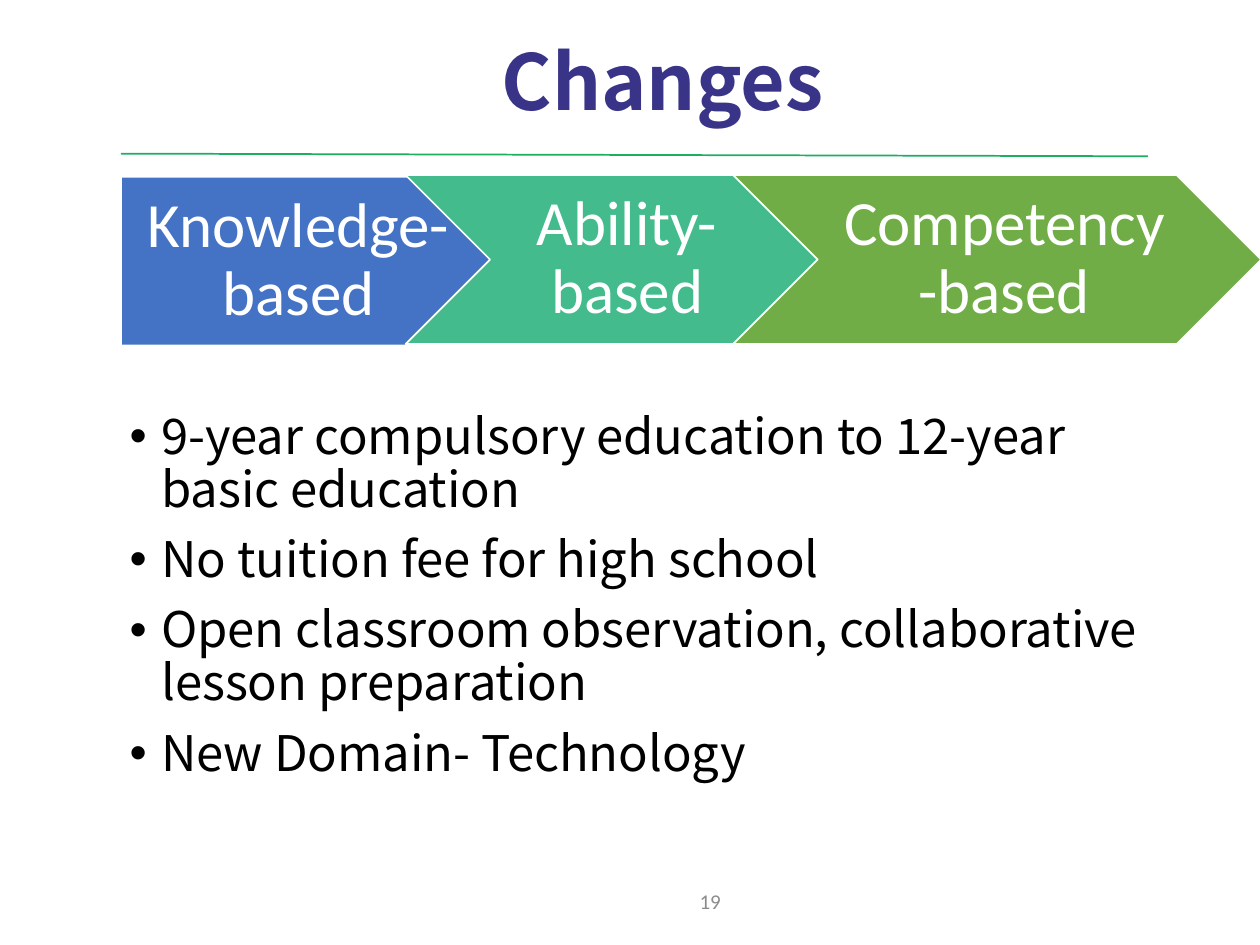
from lxml import etree
from pptx import Presentation
from pptx.dml.color import RGBColor
from pptx.enum.shapes import MSO_CONNECTOR, MSO_SHAPE
from pptx.enum.text import MSO_ANCHOR, PP_ALIGN
from pptx.oxml.ns import qn
from pptx.util import Pt

CENTER, RIGHT = PP_ALIGN.CENTER, PP_ALIGN.RIGHT
MIDDLE = MSO_ANCHOR.MIDDLE
PENTAGON, CHEVRON = MSO_SHAPE.PENTAGON, MSO_SHAPE.CHEVRON
STRAIGHT = MSO_CONNECTOR.STRAIGHT

COLORS = {
    "title": "393487",
    "rule": "1BAF61",
    "knowledge": "4472C4",
    "ability": "43BB8D",
    "competency": "70AD47",
    "white": "FFFFFF",
    "body": "000000",
    "number": "8C8C8C",
}
HEADING_FONT, LABEL_FONT = "Noto Sans CJK SC", "Calibri"
STAGE_HEIGHT = 96.5

# text, shape, colour, left, top, width, left inset
STAGES = [
    ("Knowledge-based", PENTAGON, "knowledge", 69.1, 101, 216, 15.1),
    ("Ability-based", CHEVRON, "ability", 231.8, 100.1, 245.5, 11.5),
    ("Competency-based", CHEVRON, "competency", 419, 100.1, 301.7, 11.5),
]
BULLETS = [
    "9-year compulsory education to 12-year basic education",
    "No tuition fee for high school",
    "Open classroom observation, collaborative lesson preparation",
    "New Domain- Technology",
]


def rgb(name):
    return RGBColor.from_string(COLORS[name])


def format_paragraph(paragraph, font_name, size, color, alignment=None, spacing=None, bold=False):
    paragraph.alignment = alignment
    paragraph.line_spacing = spacing
    for run in paragraph.runs:
        font = run.font
        font.name, font.size, font.bold = font_name, Pt(size), bold
        font.color.rgb = rgb(color)


def set_title(slide, text):
    title = slide.shapes.title
    title.left, title.top, title.width, title.height = Pt(68.4), Pt(4.3), Pt(620.6), Pt(88.6)
    frame = title.text_frame
    frame.text = text
    frame.vertical_anchor = MIDDLE
    format_paragraph(frame.paragraphs[0], HEADING_FONT, 44, "title", CENTER, 0.9, True)


def add_rule(slide):
    rule = slide.shapes.add_connector(STRAIGHT, Pt(69.1), Pt(87.8), Pt(655.9), Pt(89.3))
    rule.line.color.rgb = rgb("rule")
    rule.line.width = Pt(1)
    etree.SubElement(rule.element.spPr, qn("a:effectLst"))


def add_stage(slide, text, preset, color, left, top, width, inset):
    shape = slide.shapes.add_shape(preset, Pt(left), Pt(top), Pt(width), Pt(STAGE_HEIGHT))
    shape.shadow.inherit = False
    shape.fill.solid()
    shape.fill.fore_color.rgb = rgb(color)
    shape.line.color.rgb = rgb("white")
    shape.line.width = Pt(1)
    frame = shape.text_frame
    frame.text = text
    frame.word_wrap = True
    frame.vertical_anchor = MIDDLE
    frame.margin_left, frame.margin_right = Pt(inset), Pt(3.8)
    frame.margin_top = frame.margin_bottom = Pt(7.5)
    format_paragraph(frame.paragraphs[0], LABEL_FONT, 36, "white", CENTER, 0.9)


def add_text_box(slide, text, left, top, width, height):
    box = slide.shapes.add_textbox(Pt(left), Pt(top), Pt(width), Pt(height))
    frame = box.text_frame
    frame.word_wrap = True
    frame.text = text
    return frame


def add_bullet_mark(paragraph):
    properties = paragraph._p.get_or_add_pPr()
    properties.set("marL", str(Pt(18)))
    properties.set("indent", str(-Pt(18)))
    etree.SubElement(properties, qn("a:buFont"), typeface="Arial")
    etree.SubElement(properties, qn("a:buChar"), char="•")


def add_bullets(slide):
    frame = add_text_box(slide, "\n".join(BULLETS), 67, 231.8, 620.6, 378.7)
    for index, paragraph in enumerate(frame.paragraphs):
        add_bullet_mark(paragraph)
        format_paragraph(paragraph, HEADING_FONT, 28, "body", spacing=0.9)
        paragraph.space_before = Pt(10 if index else 0)


def add_slide_number(slide, number):
    frame = add_text_box(slide, number, 257, 500.4, 162, 28.8)
    frame.vertical_anchor = MIDDLE
    format_paragraph(frame.paragraphs[0], LABEL_FONT, 12, "number", RIGHT)


def main():
    presentation = Presentation()
    presentation.slide_width, presentation.slide_height = Pt(720), Pt(540)
    slide = presentation.slides.add_slide(presentation.slide_layouts[5])
    add_rule(slide)
    set_title(slide, "Changes")
    add_bullets(slide)
    add_slide_number(slide, "19")
    for stage in STAGES:
        add_stage(slide, *stage)
    presentation.save("out.pptx")


if __name__ == "__main__":
    main()
